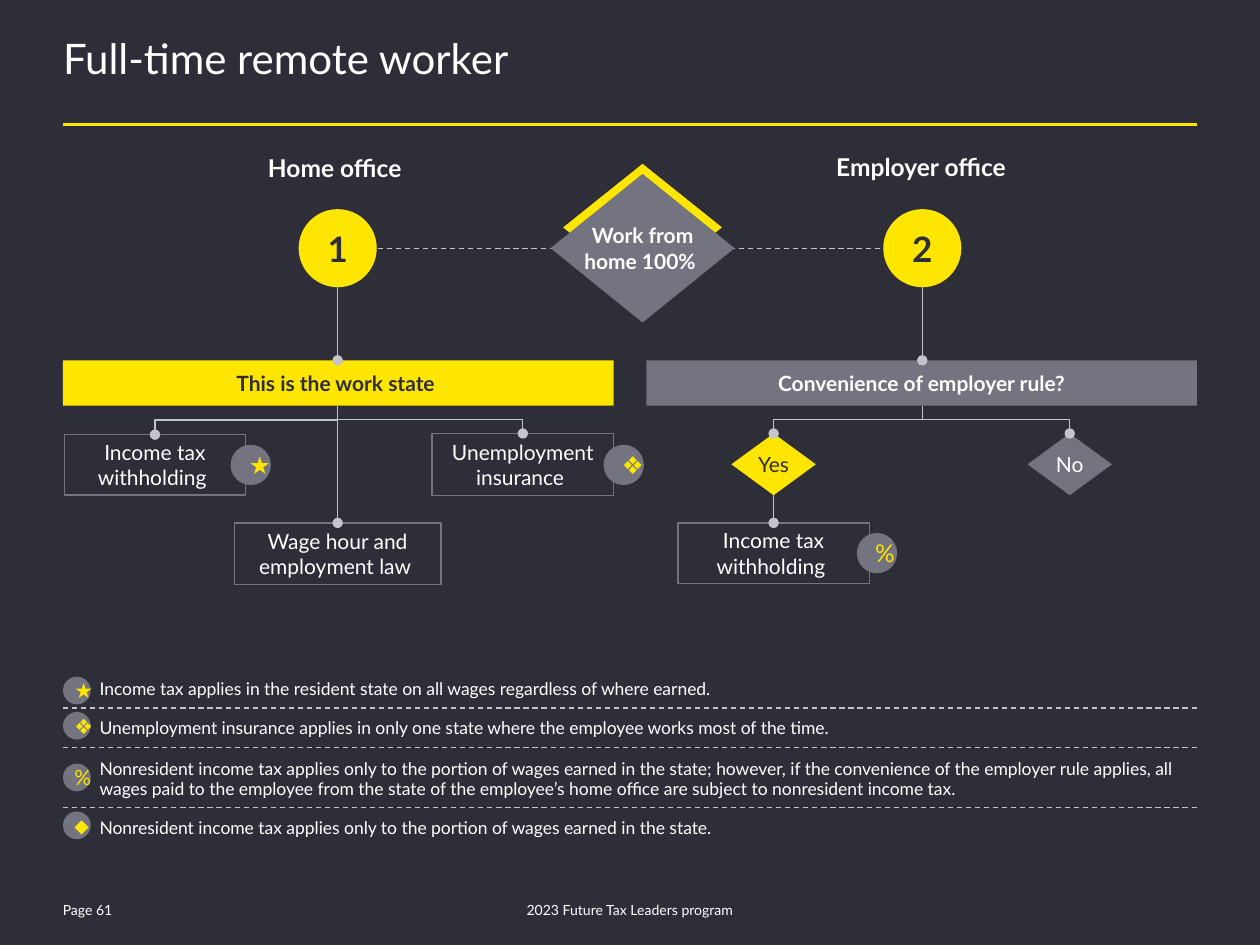
from lxml import etree
from pptx import Presentation
from pptx.dml.color import RGBColor
from pptx.enum.dml import MSO_LINE
from pptx.enum.shapes import MSO_CONNECTOR, MSO_SHAPE
from pptx.enum.text import MSO_ANCHOR, MSO_AUTO_SIZE, PP_ALIGN
from pptx.oxml.ns import qn
from pptx.util import Inches, Pt

RECT, OVAL, DIAMOND = MSO_SHAPE.RECTANGLE, MSO_SHAPE.OVAL, MSO_SHAPE.DIAMOND
STRAIGHT, ELBOW = MSO_CONNECTOR.STRAIGHT, MSO_CONNECTOR.ELBOW
LEFT, CENTER = PP_ALIGN.LEFT, PP_ALIGN.CENTER
TOP, MIDDLE = MSO_ANCHOR.TOP, MSO_ANCHOR.MIDDLE
FONT = "Lato"
COLORS = {"dark": "2E2E38", "gray": "747480", "yellow": "FFE600",
          "white": "FFFFFF", "line": "C4C4CD"}
DEFAULT_INSETS = (0.1, 0.05, 0.1, 0.05)
NO_INSETS = (0, 0, 0, 0)

# Content
TITLE = "Full-time remote worker"
HEADINGS = [("Home office ", 1.62, 1.25), ("Employer office", 6.25, 1.24)]
DECISION = "Work from home 100% "
HOME_X, EMPLOYER_X, YES_X, NO_X = 2.68, 7.32, 6.14, 8.49
OFFICES = [("1", HOME_X), ("2", EMPLOYER_X)]
BANNERS = [("This is the work state ", 0.5, "yellow", "dark"),
           ("Convenience of employer rule?", 5.13, "gray", "white")]
TOPICS = [  # paragraphs, left, top, width, height
    (["Wage hour and employment law "], 1.86, 4.15, 1.64, 0.49),
    (["Income tax withholding "], 0.51, 3.45, 1.44, 0.48),
    (["Unemployment", "insurance "], 3.43, 3.44, 1.44, 0.49),
    (["Income tax withholding "], 5.38, 4.15, 1.52, 0.48),
]
ANSWERS = [("Yes", YES_X, "yellow", "dark"), ("No", NO_X, "gray", "white")]
BADGES = [("★", 1.83, 3.53), ("❖", 4.79, 3.53), ("%", 6.8, 4.23)]
NOTES = [  # symbol, symbol top, text top, text height, line spacing, text
    ("★", 5.37, 5.38, 0.17, 0.85,
     "Income tax applies in the resident state on all wages regardless of where earned."),
    ("❖", 5.65, 5.69, 0.17, 0.85,
     "Unemployment insurance applies in only one state where the employee works "
     "most of the time."),
    ("%", 6.06, 6, 0.35, 0.95,
     "Nonresident income tax applies only to the portion of wages earned in the state; "
     "however, if the convenience of the employer rule applies, all wages paid to the "
     "employee from the state of the employee’s home office are subject to nonresident "
     "income tax."),
    ("⬥", 6.44, 6.48, 0.17, 0.85,
     "Nonresident income tax applies only to the portion of wages earned in the state."),
]
NOTE_RULES = [5.62, 5.93, 6.41]
FOOTERS = [("2023 Future Tax Leaders program", 3.31, 3.38, CENTER),
           ("Page 61", 0.4, 0.73, LEFT)]

# Vertical rule of the flow chart
CIRCLE, CIRCLE_TOP = 0.62, 1.66
BANNER_TOP, BANNER_H = 2.86, 0.36
BANNER_BOTTOM = BANNER_TOP + BANNER_H
BRANCH_Y, LOWER_Y = 3.44, 4.15
ANSWER_W, ANSWER_H = 0.67, 0.49


def color(name):
    return RGBColor.from_string(COLORS[name])


def write(shape, paragraphs, size, ink, bold=False, align=CENTER, anchor=MIDDLE,
          insets=DEFAULT_INSETS, spacing=None, wrap=True):
    frame = shape.text_frame
    frame.word_wrap = wrap
    frame.auto_size = MSO_AUTO_SIZE.NONE
    frame.vertical_anchor = anchor
    (frame.margin_left, frame.margin_top,
     frame.margin_right, frame.margin_bottom) = map(Inches, insets)
    for i, text in enumerate(paragraphs):
        paragraph = frame.add_paragraph() if i else frame.paragraphs[0]
        paragraph.alignment = align
        if spacing:
            paragraph.line_spacing = spacing
        run = paragraph.add_run()
        run.text = text
        run.font.name, run.font.size, run.font.bold = FONT, Pt(size), bold
        run.font.color.rgb = color(ink)


def add_text(text, box, size, **style):
    write(slide.shapes.add_textbox(*map(Inches, box)), [text], size, "white", **style)


def add_block(kind, box, fill, outline=None):
    block = slide.shapes.add_shape(kind, *map(Inches, box))
    block.shadow.inherit = False
    block.fill.solid()
    block.fill.fore_color.rgb = color(fill)
    if outline:
        block.line.color.rgb = color(outline)
        block.line.width = Pt(0.75)
    else:
        block.line.fill.background()
    return block


def add_line(start, end, ink="line", width=0.75, kind=STRAIGHT, dash=False, dot=False):
    line = slide.shapes.add_connector(kind, *map(Inches, (*start, *end)))
    line.line.color.rgb = color(ink)
    line.line.width = Pt(width)
    if dash:
        line.line.dash_style = MSO_LINE.DASH
    properties = line._element.spPr
    if dot:
        etree.SubElement(properties.find(qn("a:ln")), qn("a:tailEnd"), type="oval")
    etree.SubElement(properties, qn("a:effectLst"))
    return line


def add_branch(start, end):
    """Elbow that leaves downwards: a sideways elbow turned by a quarter."""
    mid_x, mid_y = (start[0] + end[0]) / 2, (start[1] + end[1]) / 2
    rightwards = end[0] > start[0]
    half_w = (end[1] - start[1]) / 2 * (-1 if rightwards else 1)
    half_h = abs(end[0] - start[0]) / 2
    branch = add_line((mid_x - half_w, mid_y - half_h), (mid_x + half_w, mid_y + half_h),
                      kind=ELBOW, dot=True)
    degrees = 270 if rightwards else 90
    branch._element.spPr.find(qn("a:xfrm")).set("rot", str(degrees * 60000))


def add_badge(symbol, left, top, diameter, size):
    badge = add_block(OVAL, (left, top, diameter, diameter), "gray")
    write(badge, [symbol], size, "yellow")


prs = Presentation()
prs.slide_width, prs.slide_height = Inches(10), Inches(7.5)
slide = prs.slides.add_slide(prs.slide_layouts[5])
slide.background.fill.solid()
slide.background.fill.fore_color.rgb = color("dark")

# Title, rule and footer
title = slide.shapes.title
title.left, title.top, title.width, title.height = map(Inches, (0.5, 0.32, 9, 0.65))
write(title, [TITLE], 24, "white", align=LEFT, anchor=TOP, insets=NO_INSETS, spacing=0.85)
add_line((0.5, 0.99), (9.5, 0.99), "yellow", 1.5)
for text, left, width, align in FOOTERS:
    add_text(text, (left, 7.12, width, 0.2), 8, align=align)

# Topic boxes
for paragraphs, *box in TOPICS:
    write(add_block(RECT, box, "dark", "gray"), paragraphs, 12, "white",
          insets=(0.04, 0.07, 0.04, 0.07))

# Central decision
add_line((3, 1.97), (7, 1.97), dash=True)
add_block(DIAMOND, (4.47, 1.3, 1.26, 1.01), "yellow")
add_block(DIAMOND, (4.37, 1.38, 1.46, 1.18), "gray")
add_text(DECISION, (4.41, 1.72, 1.38, 0.5), 12, bold=True, anchor=TOP)

# Headings, banners and numbered offices
for text, left, top in HEADINGS:
    add_text(text, (left, top, 2.12, 0.2), 14, bold=True, anchor=TOP,
             insets=NO_INSETS, spacing=0.85)
for text, left, fill, ink in BANNERS:
    write(add_block(RECT, (left, BANNER_TOP, 4.37, BANNER_H), fill), [text], 12, ink,
          bold=True, insets=(0.04,) * 4)
for number, x in OFFICES:
    circle = add_block(OVAL, (x - CIRCLE / 2, CIRCLE_TOP, CIRCLE, CIRCLE), "yellow")
    write(circle, [number], 20, "dark", bold=True)
    add_line((x, CIRCLE_TOP + CIRCLE), (x, BANNER_TOP), dot=True)

# Answers and branches
for text, x, fill, ink in ANSWERS:
    answer = add_block(DIAMOND, (x - ANSWER_W / 2, BRANCH_Y, ANSWER_W, ANSWER_H), fill)
    write(answer, [text], 12, ink, wrap=False)
add_line((HOME_X, BANNER_BOTTOM), (HOME_X, LOWER_Y), dot=True)
add_line((YES_X, BRANCH_Y + ANSWER_H), (YES_X, LOWER_Y), dot=True)
for x, target_x, target_y in [(HOME_X, 1.23, 3.45), (HOME_X, 4.15, BRANCH_Y),
                              (EMPLOYER_X, YES_X, BRANCH_Y), (EMPLOYER_X, NO_X, BRANCH_Y)]:
    add_branch((x, BANNER_BOTTOM), (target_x, target_y))
for symbol, left, top in BADGES:
    add_badge(symbol, left, top, 0.32, 14)

# Notes
for symbol, symbol_top, top, height, spacing, text in NOTES:
    add_badge(symbol, 0.5, symbol_top, 0.22, 12)
    add_text(text, (0.79, top, 8.72, height), 10, align=LEFT, anchor=TOP,
             insets=(0, 0.03, 0, 0), spacing=spacing)
for y in NOTE_RULES:
    add_line((0.5, y), (9.5, y), dash=True)

prs.save("out.pptx")
